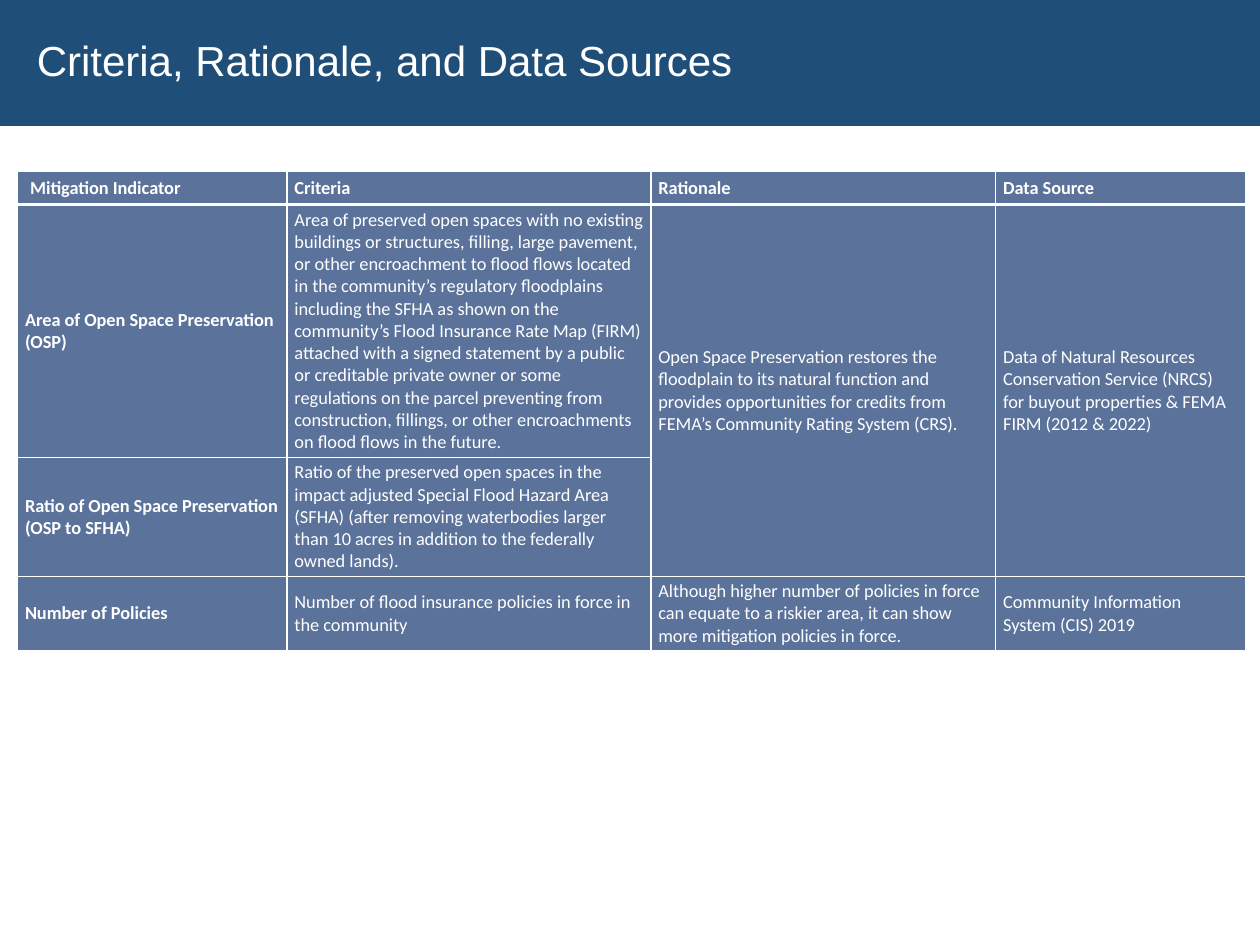
from lxml import etree
from pptx import Presentation
from pptx.dml.color import RGBColor
from pptx.enum import text as t
from pptx.oxml import ns
from pptx.util import Pt

WHITE, NAVY, SLATE = "FFFFFF", "1F4E79", "5B739B"
COLS = [154, 208, 197, 143]
ROWS = [19, 144.5, 68, 42.5]
CELLS = [
    ["Mitigation Indicator", "Criteria", "Rationale", "Data Source"],
    ["Area of Open Space Preservation (OSP)",
     "Area of preserved open spaces with no existing buildings or structures, "
     "filling, large pavement, or other encroachment to flood flows located in "
     "the community’s regulatory floodplains including the SFHA as shown on the "
     "community’s Flood Insurance Rate Map (FIRM) attached with a signed "
     "statement by a public or creditable private owner or some regulations on "
     "the parcel preventing from construction, fillings, or other encroachments "
     "on flood flows in the future.",
     "Open Space Preservation restores the floodplain to its natural function "
     "and provides opportunities for credits from FEMA’s Community Rating "
     "System (CRS).",
     "Data of Natural Resources Conservation Service (NRCS) for buyout "
     "properties & FEMA FIRM (2012 & 2022)"],
    ["Ratio of Open Space Preservation (OSP to SFHA)",
     "Ratio of the preserved open spaces in the impact adjusted Special Flood "
     "Hazard Area (SFHA) (after removing waterbodies larger than 10 acres in "
     "addition to the federally owned lands).", None, None],
    ["Number of Policies",
     "Number of flood insurance policies in force in the community",
     "Although higher number of policies in force can equate to a riskier area, "
     "it can show more mitigation policies in force.",
     "Community Information System (CIS) 2019"],
]


def paint(fill, tone):
    fill.solid()
    fill.fore_color.rgb = RGBColor.from_string(tone)


def write(par, words, face, size, bold=False):
    run = par.add_run()
    run.text = words
    run.font.name, run.font.size, run.font.bold = face, Pt(size), bold
    paint(run.font.fill, WHITE)


def edge(cell, side, width):
    line = etree.SubElement(cell._tc.get_or_add_tcPr(), ns.qn("a:ln" + side),
                            w=str(Pt(width)))
    fill = etree.SubElement(line, ns.qn("a:solidFill"))
    etree.SubElement(fill, ns.qn("a:srgbClr"), val=WHITE)


def banner(slide, x, y, w, h):
    title = slide.shapes.title
    title.left, title.top, title.width, title.height = map(Pt, (x, y, w, h))
    paint(title.fill, NAVY)
    frame = title.text_frame
    frame.auto_size = t.MSO_AUTO_SIZE.NONE
    frame.vertical_anchor = t.MSO_ANCHOR.MIDDLE
    frame.margin_left = Pt(21)
    par = frame.paragraphs[0]
    par.alignment = t.PP_ALIGN.LEFT
    par.line_spacing = 0.9
    write(par, "Criteria, Rationale, and Data Sources", "Arial", 24)


def grid(slide, x, y):
    box = slide.shapes.add_table(len(ROWS), len(COLS), Pt(x), Pt(y),
                                 Pt(sum(COLS)), Pt(sum(ROWS)))
    table = box.table
    for col, width in zip(table.columns, COLS):
        col.width = Pt(width)
    for row, height in zip(table.rows, ROWS):
        row.height = Pt(height)
    for c in (2, 3):
        table.cell(1, c).merge(table.cell(2, c))
    for r, row in enumerate(CELLS):
        for c, words in enumerate(row):
            cell = table.cell(r, c)
            thick = {"T": r == 1, "B": r == 0}
            for side in "LRTB":
                edge(cell, side, 2.25 if thick.get(side) else 1)
            paint(cell.fill, SLATE)
            cell.vertical_anchor = t.MSO_ANCHOR.MIDDLE
            cell.margin_left = Pt(7.2 if r == c == 0 else 4.3)
            cell.margin_right = Pt(4.3)
            cell.margin_top = cell.margin_bottom = Pt(2)
            if words:
                write(cell.text_frame.paragraphs[0], words, "Calibri", 10.5,
                      r == 0 or c == 0)


def main():
    deck = Presentation()
    deck.slide_width, deck.slide_height = Pt(720), Pt(540)
    slide = deck.slides.add_slide(deck.slide_layouts[5])
    banner(slide, 0, 0, 720, 72)
    grid(slide, 10, 98)
    deck.save("out.pptx")


if __name__ == "__main__":
    main()
